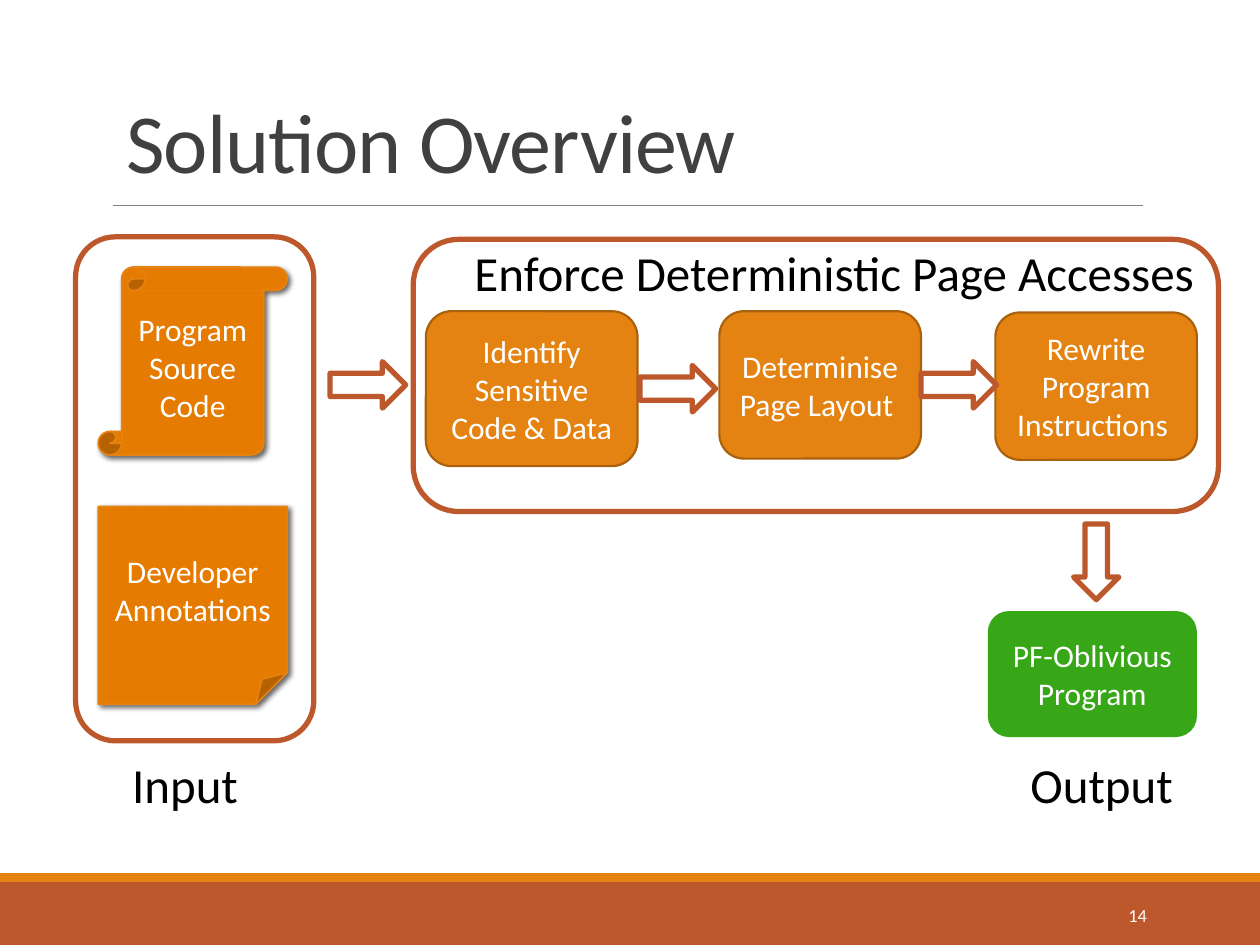
from typing import NamedTuple

from lxml.etree import SubElement
from pptx import Presentation
from pptx.dml.color import RGBColor
from pptx.enum.shapes import MSO_CONNECTOR as Connector, MSO_SHAPE as Shape
from pptx.enum.text import MSO_ANCHOR as Anchor, MSO_AUTO_SIZE as AutoSize, PP_ALIGN as Align
from pptx.oxml.ns import qn
from pptx.util import Inches, Pt

COLUMNS, ROWS = 100, 75
WIDTH, HEIGHT = Inches(10), Inches(7.5)
RUST, ORANGE, PAPER, BROWN = "BD582C", "E48312", "E57B00", "A9610D"
WHITE, BLACK, CHARCOAL, GREY, GREEN = "FFFFFF", "000000", "404040", "808080", "37A717"
OUTLINE = {"fill": WHITE, "line": RUST, "weight": 3}
STEP = {"fill": ORANGE, "line": BROWN, "weight": 1.25}
DOCUMENT = {"fill": PAPER, "line": ORANGE, "weight": 1}


class Box(NamedTuple):
    """A rectangle measured in columns and rows of the slide grid."""
    left: float
    top: float
    width: float
    height: float

    def inner(self, left, top, width, height):
        """Return a box offset from this one's top left corner."""
        return Box(self.left + left, self.top + top, width, height)

    def lengths(self):
        """Return left, top, width and height as slide lengths."""
        column, row = WIDTH / COLUMNS, HEIGHT / ROWS
        return [round(size * unit) for size, unit in zip(self, (column, row, column, row))]


def color(value):
    """Turn a hex string into a colour."""
    return RGBColor.from_string(value)


def write(frame, lines, size=18, tint=WHITE, align=Align.CENTER, **settings):
    """Fill a text frame with one paragraph for each line."""
    formats = {"word_wrap": True, "vertical_anchor": Anchor.MIDDLE, **settings}
    for name, value in formats.items():
        setattr(frame, name, value)
    for index, line in enumerate(lines):
        para = frame.add_paragraph() if index else frame.paragraphs[0]
        para.alignment = align
        span = para.add_run()
        span.text = line
        span.font.color.rgb = color(tint)
        for name, value in {"name": "Calibri", "size": Pt(size)}.items():
            setattr(span.font, name, value)


def add_label(page, box, text, size=28, tint=BLACK, align=Align.LEFT, **settings):
    """Place a line of free text."""
    label = page.shapes.add_textbox(*box.lengths())
    write(label.text_frame, [text], size, tint, align, **settings)


def add_figure(page, kind, box, fill, line=None, weight=0, lines=(), rotation=0):
    """Place a filled preset shape, with an outline and text where given."""
    figure = page.shapes.add_shape(kind, *box.lengths())
    figure.shadow.inherit = False
    figure.rotation = rotation
    figure.fill.solid()
    figure.fill.fore_color.rgb = color(fill)
    if line:
        figure.line.color.rgb = color(line)
        figure.line.width = Pt(weight)
    else:
        figure.line.fill.background()
    write(figure.text_frame, lines)
    return figure


def add_document(page, kind, box, lines):
    """Place an input document that casts a soft shadow."""
    figure = add_figure(page, kind, box, lines=lines, **DOCUMENT)
    effects = figure._element.spPr.find(qn("a:effectLst"))
    shadow = SubElement(effects, qn("a:outerShdw"), blurRad=str(Pt(3)), dist=str(Pt(2)),
                        dir=str(45 * 60000), algn="tl", rotWithShape="0")
    tint = SubElement(shadow, qn("a:srgbClr"), val=BLACK)
    SubElement(tint, qn("a:alpha"), val="60000")


def add_arrow(page, box, rotation=0):
    """Place an outlined block arrow."""
    add_figure(page, Shape.RIGHT_ARROW, box, rotation=rotation, **OUTLINE)


def add_header(page, box):
    """Format the title and draw the rule below it."""
    title = page.shapes.title
    title.left, title.top, title.width, title.height = box.lengths()
    write(title.text_frame, ["Solution Overview"], 48, CHARCOAL, Align.LEFT,
          vertical_anchor=Anchor.BOTTOM, auto_size=AutoSize.NONE)
    para = title.text_frame.paragraphs[0]
    para.line_spacing = 0.85
    para.runs[0].font._element.set("spc", "-50")
    left, top, width, _ = box.inner(0, 13.2, 81.7, 0).lengths()
    rule = page.shapes.add_connector(Connector.STRAIGHT, left, top, left + width, top)
    rule.line.color.rgb = color(GREY)
    rule.line.width = Pt(0.5)
    SubElement(rule._element.spPr, qn("a:effectLst"))


def add_footer(page, box):
    """Draw the two bands at the foot and the slide number."""
    add_figure(page, Shape.RECTANGLE, box, RUST)
    add_figure(page, Shape.RECTANGLE, box.inner(0, -0.7, box.width, 0.7), ORANGE)
    add_label(page, box.inner(81.2, 0.6, 10.8, 4), "14", 10.5, WHITE, Align.RIGHT)


def add_input(page, box):
    """Draw the frame holding the two input documents."""
    add_figure(page, Shape.ROUNDED_RECTANGLE, box, **OUTLINE)
    add_document(page, Shape.VERTICAL_SCROLL, box.inner(1.8, 2.4, 15, 14.9),
                 ["Program", "Source", "Code"])
    add_document(page, Shape.FOLDED_CORNER, box.inner(1.8, 21.4, 15, 15.7),
                 ["Developer", "Annotations"])
    add_label(page, box.inner(3.5, 40.6, 10.5, 5.7), "Input", word_wrap=False)
    add_arrow(page, box.inner(20.2, 9.9, 6, 3.7))


def add_process(page, box):
    """Draw the frame with three steps joined by arrows."""
    steps = [
        (Box(1, 5.7, 16.8, 12.3), ["Identify Sensitive", "Code & Data"]),
        (Box(24.3, 5.7, 16, 11.7), ["Determinise", "Page Layout "]),
        (Box(46.2, 5.8, 16, 11.7), ["Rewrite", "Program Instructions "]),
    ]
    add_figure(page, Shape.ROUNDED_RECTANGLE, box, **OUTLINE)
    add_label(page, box.inner(1, -0.3, 64.8, 5.7), "Enforce Deterministic Page Accesses",
              align=Align.CENTER)
    for place, lines in steps:
        add_figure(page, Shape.ROUNDED_RECTANGLE, box.inner(*place), lines=lines, **STEP)
    for left, top in ((18, 10), (40.3, 9.7)):
        add_arrow(page, box.inner(left, top, 6, 3.7))


def add_output(page, box):
    """Draw the arrow down to the resulting program and its label."""
    add_arrow(page, box.inner(5.6, 0, 6, 3.6), rotation=90)
    add_figure(page, Shape.ROUNDED_RECTANGLE, box.inner(0, 5.7, box.width, 10), GREEN,
               lines=["PF-Oblivious", "Program"])
    add_label(page, box.inner(2.4, 16.6, 13.4, 5.7), "Output", word_wrap=False)


def main():
    """Build the slide and save it."""
    deck = Presentation()
    deck.slide_width, deck.slide_height = WIDTH, HEIGHT
    page = deck.slides.add_slide(deck.slide_layouts.get_by_name("Title Only"))
    add_footer(page, Box(0, 70, COLUMNS, 5))
    add_header(page, Box(9, 3.1, 82.5, 12.5))
    add_input(page, Box(6, 18.8, 18.9, 40))
    add_process(page, Box(32.8, 19, 63.9, 21.6))
    add_output(page, Box(78.4, 42.8, 16.6, 22.3))
    deck.save("out.pptx")


if __name__ == "__main__":
    main()
